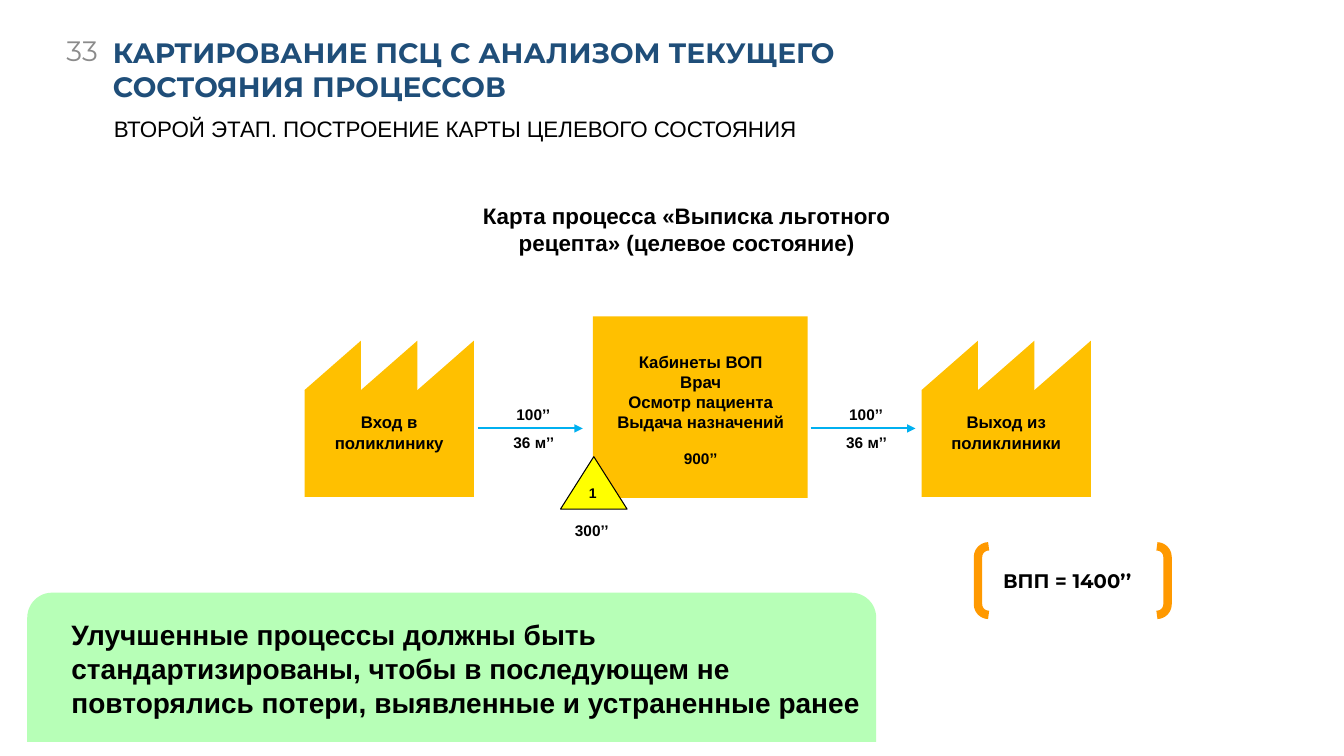
from lxml import etree
from pptx import Presentation
from pptx.dml.color import RGBColor
from pptx.enum.shapes import MSO_CONNECTOR, MSO_SHAPE as SHAPE
from pptx.enum.text import MSO_ANCHOR as ANCHOR, MSO_AUTO_SIZE, PP_ALIGN as ALIGN
from pptx.oxml.ns import qn
from pptx.util import Inches, Pt

COLORS = {
    "black": "000000", "white": "FFFFFF", "gray": "8B8B8B", "navy": "1F4E79",
    "amber": "FFC000", "blue": "00B0F0", "yellow": "FFFF00",
    "orange": "FF9900", "green": "B7FFB7",
}


def rgb(name):
    return RGBColor.from_string(COLORS[name])


def add_run(p, text, size, bold=True, font="Arial", color="black"):
    r = p.add_run()
    r.text = text
    r.font.size = Pt(size)
    r.font.bold = bold
    r.font.name = font
    r.font.color.rgb = rgb(color)


def add_text(slide, box, lines, size, align=ALIGN.CENTER, anchor=ANCHOR.TOP, **style):
    tf = slide.shapes.add_textbox(*map(Inches, box)).text_frame
    tf.word_wrap = True
    tf.vertical_anchor = anchor
    for i, line in enumerate(lines):
        p = tf.paragraphs[0] if i == 0 else tf.add_paragraph()
        p.alignment = align
        add_run(p, line, size, **style)
    return tf


def add_block(slide, kind, box, fill, line=None, width=0.75):
    sp = slide.shapes.add_shape(kind, *map(Inches, box))
    sp.shadow.inherit = False
    sp.fill.solid()
    sp.fill.fore_color.rgb = rgb(fill)
    if line:
        sp.line.color.rgb = rgb(line)
        sp.line.width = Pt(width)
    else:
        sp.line.fill.background()
    return sp


def add_title(slide, text):
    title = slide.shapes.title
    title.left, title.top, title.width, title.height = map(Inches, (1.02, 0.41, 8.21, 0.55))
    tf = title.text_frame
    tf.word_wrap = True
    tf.auto_size = MSO_AUTO_SIZE.NONE
    tf.vertical_anchor = ANCHOR.MIDDLE
    p = tf.paragraphs[0]
    p.alignment = ALIGN.LEFT
    p.line_spacing = 1.0
    add_run(p, text, 20, font="Montserrat", color="navy")


def add_factory(slide, left, label):
    tooth = 0.56
    for i in range(3):
        roof = add_block(slide, SHAPE.ISOSCELES_TRIANGLE,
                         (left + i * tooth, 3.38, tooth, 0.49), "amber")
        roof.adjustments[0] = 1
    add_block(slide, SHAPE.RECTANGLE, (left, 3.87, 3 * tooth, 1.06), "amber")
    add_text(slide, (left, 4.04, 3 * tooth, 0.5), [label], 12)


def add_transfer(slide, left, time, distance):
    y = Inches(4.25)
    arrow = slide.shapes.add_connector(
        MSO_CONNECTOR.STRAIGHT, Inches(left), y, Inches(left + 1.04), y)
    arrow.line.color.rgb = rgb("blue")
    arrow.line.width = Pt(1.5)
    etree.SubElement(arrow.line._get_or_add_ln(), qn("a:tailEnd"), type="triangle")
    etree.SubElement(arrow._element.spPr, qn("a:effectLst"))
    add_text(slide, (left + 0.13, 3.97, 0.84, 0.29), [time], 11)
    add_text(slide, (left - 0.03, 4.25, 1.17, 0.29), [distance], 11)


def add_office(slide):
    add_block(slide, SHAPE.RECTANGLE, (5.88, 3.14, 2.13, 1.8), "amber")
    tf = add_text(slide, (5.93, 3.44, 2.04, 1.27),
                  ["Кабинеты ВОП", "Врач", "Осмотр пациента", "Выдача назначений"], 12)
    p = tf.add_paragraph()
    p.alignment = ALIGN.CENTER
    p.space_before = Pt(12)
    add_run(p, "900’’", 11)


def add_queue(slide):
    add_block(slide, SHAPE.ISOSCELES_TRIANGLE, (5.56, 4.53, 0.66, 0.52), "yellow", "black")
    add_text(slide, (5.52, 4.76, 0.72, 0.31), ["1"], 10)
    add_text(slide, (5.45, 5.12, 0.84, 0.29), ["300’’"], 11)


def add_total(slide, text):
    sp = add_block(slide, SHAPE.DOUBLE_BRACKET, (9.7, 5.42, 1.88, 0.68), "white", "orange", 6)
    sp.adjustments[0] = 0.155
    tf = sp.text_frame
    tf.word_wrap = True
    tf.vertical_anchor = ANCHOR.MIDDLE
    p = tf.paragraphs[0]
    p.alignment = ALIGN.LEFT
    p._p.get_or_add_pPr().set("marL", str(Inches(0.12)))
    add_run(p, text, 14, font="Montserrat")


def add_conclusion(slide, text):
    add_block(slide, SHAPE.ROUND_2_SAME_RECTANGLE, (0.27, 5.88, 8.42, 1.48), "green")
    add_text(slide, (0.61, 6.08, 8.08, 1.11), [text], 20, ALIGN.LEFT)


def main():
    prs = Presentation()
    prs.slide_width, prs.slide_height = Inches(13.33), Inches(7.5)
    slide = prs.slides.add_slide(prs.slide_layouts[5])

    add_title(slide, "КАРТИРОВАНИЕ ПСЦ С АНАЛИЗОМ ТЕКУЩЕГО СОСТОЯНИЯ ПРОЦЕССОВ")
    add_text(slide, (0, 0.23, 1.07, 0.54), ["33"], 20, ALIGN.RIGHT, ANCHOR.MIDDLE,
             bold=False, font="Montserrat", color="gray")
    add_text(slide, (1.03, 1.09, 8.51, 0.37),
             ["ВТОРОЙ ЭТАП. ПОСТРОЕНИЕ КАРТЫ ЦЕЛЕВОГО СОСТОЯНИЯ"], 16, ALIGN.LEFT, bold=False)
    add_text(slide, (4.6, 1.96, 4.42, 0.64),
             ["Карта процесса «Выписка льготного рецепта» (целевое состояние)"], 16)

    add_office(slide)
    add_factory(slide, 3.02, "Вход в поликлинику")
    add_factory(slide, 9.14, "Выход из поликлиники")
    for left in (4.74, 8.04):
        add_transfer(slide, left, "100’’", "36 м’’")
    add_queue(slide)
    add_total(slide, "ВПП = 1400’’")
    add_conclusion(slide, "Улучшенные процессы должны быть стандартизированы, чтобы "
                          "в последующем не повторялись потери, выявленные "
                          "и устраненные ранее")
    prs.save("out.pptx")


if __name__ == "__main__":
    main()
